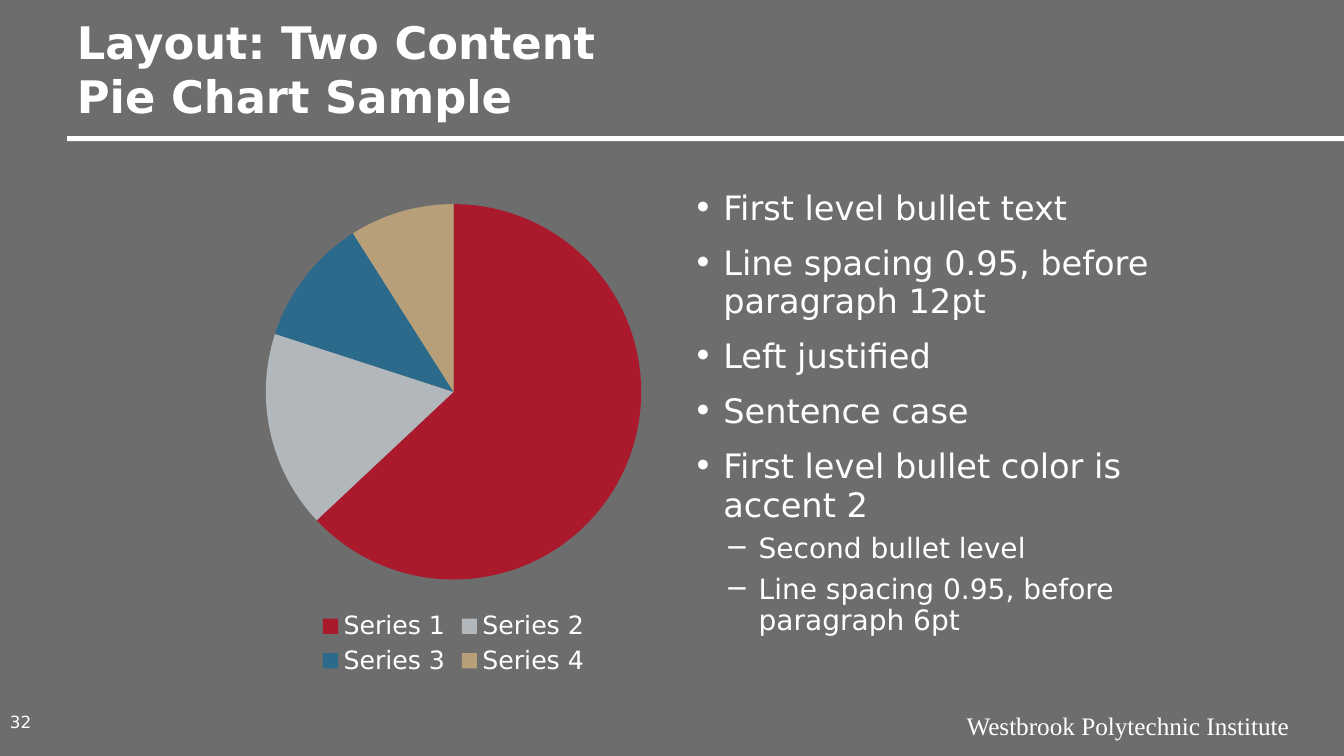
from lxml.etree import SubElement
from pptx import Presentation
from pptx.chart.data import CategoryChartData
from pptx.dml.color import RGBColor
from pptx.enum.chart import XL_CHART_TYPE, XL_LEGEND_POSITION
from pptx.enum.shapes import MSO_SHAPE
from pptx.enum.text import MSO_ANCHOR, PP_ALIGN
from pptx.oxml.ns import qn
from pptx.util import Cm, Pt

COLORS = {
    "background": "6D6D6D",
    "white": "FFFFFF",
    "Series 1": "AB192D",
    "Series 2": "B2B7BB",
    "Series 3": "2C6A8C",
    "Series 4": "B7A079",
}
SANS = "DejaVu Sans"
SERIF = "Times New Roman"
SHARES = {"Series 1": 63, "Series 2": 17, "Series 3": 11, "Series 4": 9}
LEVELS = [
    {"size": 24, "before": 12, "indent": 0.76, "bullet": "•"},
    {"size": 20, "before": 6, "indent": 1.65, "bullet": "─"},
]
BULLETS = [
    (0, "First level bullet text"),
    (0, "Line spacing 0.95, before paragraph 12pt"),
    (0, "Left justified"),
    (0, "Sentence case"),
    (0, "First level bullet color is accent 2"),
    (1, "Second bullet level"),
    (1, "Line spacing 0.95, before paragraph 6pt"),
]


def add_text_frame(left, top, width, height, anchor=MSO_ANCHOR.TOP):
    frame = slide.shapes.add_textbox(Cm(left), Cm(top), Cm(width), Cm(height)).text_frame
    frame.word_wrap = True
    frame.vertical_anchor = anchor
    return frame


def format_font(font, size, name=SANS, bold=False):
    for attribute, value in {"size": Pt(size), "name": name, "bold": bold}.items():
        setattr(font, attribute, value)
    font.color.rgb = RGBColor.from_string(COLORS["white"])


prs = Presentation()
prs.slide_width, prs.slide_height = Cm(33.87), Cm(19.05)
slide = prs.slides.add_slide(prs.slide_layouts[6])
slide.background.fill.solid()
slide.background.fill.fore_color.rgb = RGBColor.from_string(COLORS["background"])

title_rule = slide.shapes.add_shape(MSO_SHAPE.RECTANGLE, Cm(1.69), Cm(3.43), Cm(32.18), Cm(0.13))
title_rule.shadow.inherit = False
title_rule.fill.solid()
title_rule.fill.fore_color.rgb = RGBColor.from_string(COLORS["white"])
title_rule.line.fill.background()

institute = add_text_frame(20.32, 17.78, 12.42, 1.02).paragraphs[0]
institute.text = "Westbrook Polytechnic Institute"
institute.alignment = PP_ALIGN.RIGHT
format_font(institute.font, 18, SERIF)

title = add_text_frame(1.69, 0.97, 30.48, 2.24, MSO_ANCHOR.BOTTOM).paragraphs[0]
title.text = "Layout: Two Content\vPie Chart Sample"
format_font(title.font, 32, bold=True)

shares = CategoryChartData()
shares.categories = list(SHARES)
shares.add_series("Series 1", list(SHARES.values()))
pie = slide.shapes.add_chart(
    XL_CHART_TYPE.PIE, Cm(6.35), Cm(4.65), Cm(10.16), Cm(12.5), shares
).chart
pie.has_title = False
pie.has_legend = True
pie.legend.position = XL_LEGEND_POSITION.BOTTOM
pie.legend.include_in_layout = False
format_font(pie.font, 18)
pie.plots[0].vary_by_categories = True
for index, category in enumerate(SHARES):
    slice_format = pie.plots[0].series[0].points[index].format
    slice_format.fill.solid()
    slice_format.fill.fore_color.rgb = RGBColor.from_string(COLORS[category])
    slice_format.line.fill.background()

body = add_text_frame(17.22, 4.65, 13.55, 12.5)
for index, (level, wording) in enumerate(BULLETS):
    style = LEVELS[level]
    item = body.add_paragraph() if index else body.paragraphs[0]
    item.text = wording
    spacing = {"level": level, "line_spacing": 0.95, "space_before": Pt(style["before"])}
    for attribute, value in spacing.items():
        setattr(item, attribute, value)
    format_font(item.font, style["size"])
    properties = item._p.get_or_add_pPr()
    properties.set("marL", str(Cm(style["indent"])))
    properties.set("indent", str(-Cm(0.76)))
    default_run = properties.find(qn("a:defRPr"))
    bullet_color = SubElement(properties, qn("a:buClr"))
    SubElement(bullet_color, qn("a:srgbClr"), val=COLORS["white"])
    SubElement(properties, qn("a:buFont"), typeface=SANS)
    SubElement(properties, qn("a:buChar"), char=style["bullet"])
    properties.append(default_run)
    format_font(item.runs[0].font, style["size"])

page_number = add_text_frame(0, 17.75, 1.69, 0.86, MSO_ANCHOR.MIDDLE).paragraphs[0]
page_number.text = "32"
format_font(page_number.font, 12)

for paragraph, size, name, bold in [
    (institute, 18, SERIF, False),
    (title, 32, SANS, True),
    (page_number, 12, SANS, False),
]:
    for run in paragraph.runs:
        format_font(run.font, size, name, bold)

prs.save("out.pptx")
